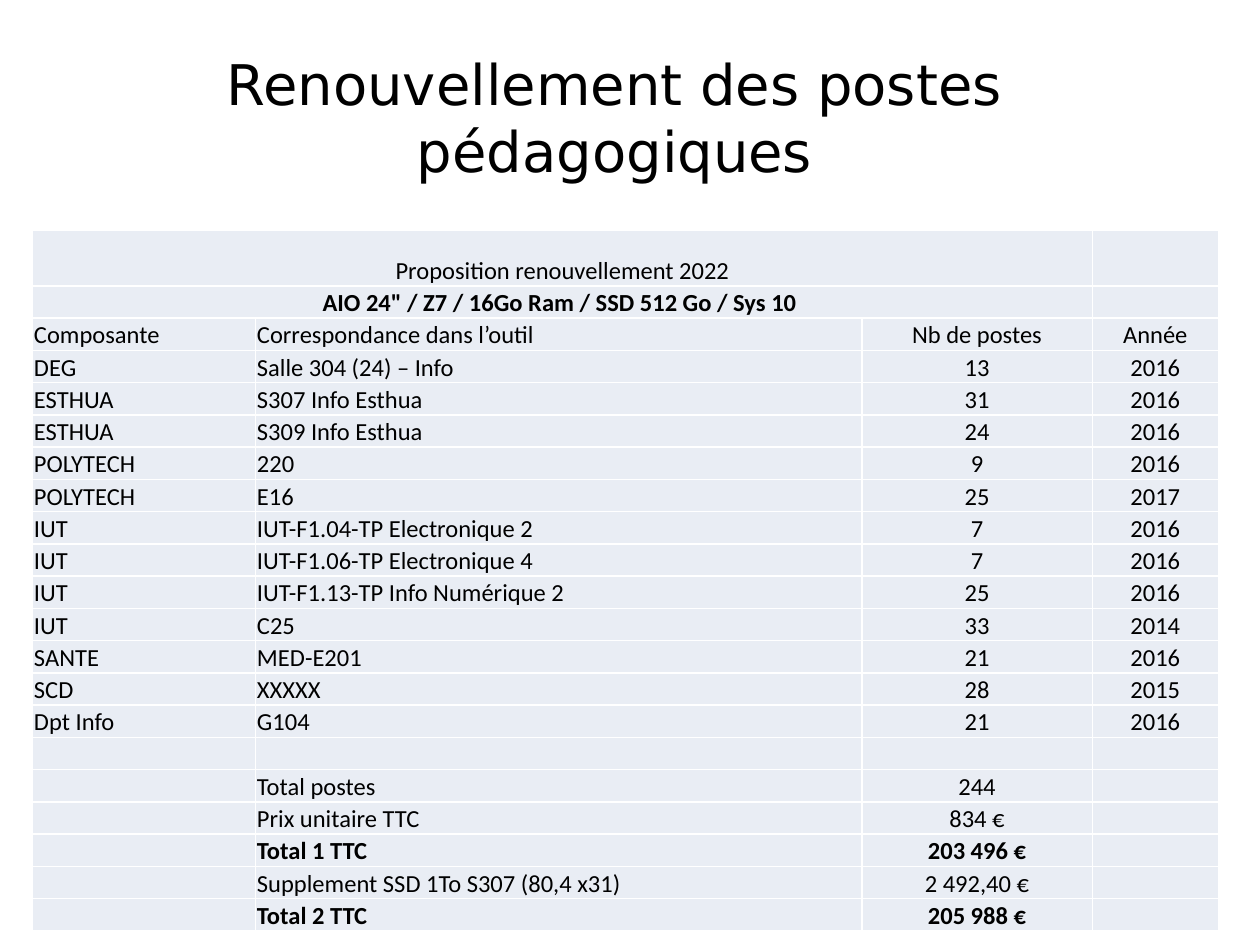
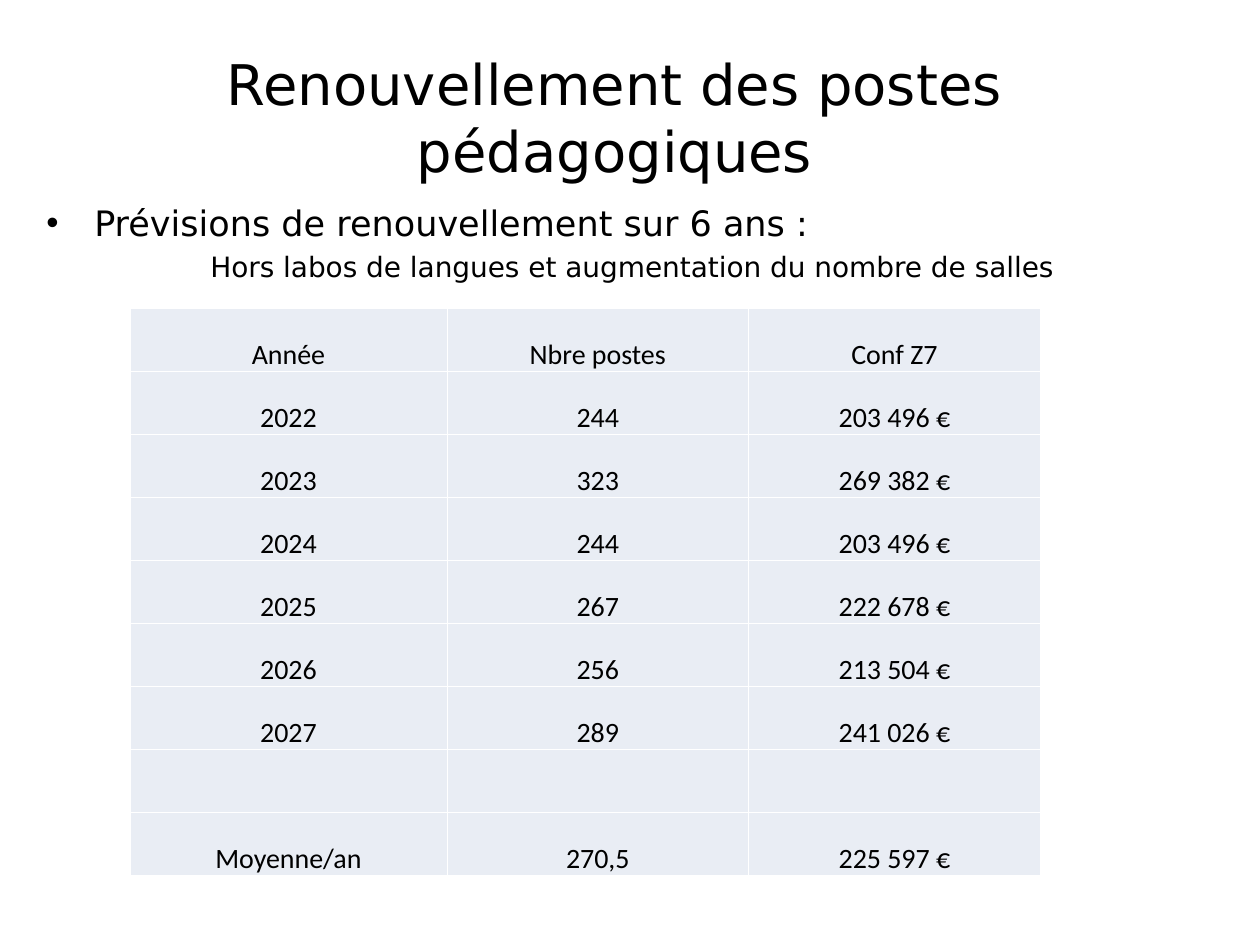
import lxml.etree
import pptx
import pptx.dml.color
import pptx.enum.text
import pptx.oxml.ns
import pptx.util

Inches, Pt = pptx.util.Inches, pptx.util.Pt
qn = pptx.oxml.ns.qn
ALIGN = pptx.enum.text.PP_ALIGN
ANCHOR = pptx.enum.text.MSO_ANCHOR

BLACK, WHITE, CELL_BLUE = "000000", "FFFFFF", "E9EDF4"
TITLE_FONT, TABLE_FONT = "DejaVu Sans", "Calibri"
TITLE = "Renouvellement des postes pédagogiques"

PROPOSAL = {
    "at": (0.26, 1.83), "columns": (1.77, 4.81, 1.83, 1), "aligns": "llcc", "size": 14,
    "heights": [0.44] + [(5.56 - 0.44) / 20] * 20,
    "banners": (0, 1), "bold": (1, 18, 20),
    "rows": [
        ("Proposition renouvellement 2022", "", "", ""),
        ('AIO 24" / Z7 / 16Go Ram / SSD 512 Go / Sys 10 ', "", "", ""),
        ("Composante", "Correspondance dans l’outil", "Nb de postes", "Année"),
        ("DEG", "Salle 304 (24) – Info", "13", "2016"),
        ("ESTHUA", "S307 Info Esthua", "31", "2016"),
        ("ESTHUA", "S309 Info Esthua", "24", "2016"),
        ("POLYTECH", "220", "9", "2016"),
        ("POLYTECH", "E16", "25", "2017"),
        ("IUT", "IUT-F1.04-TP Electronique 2", "7", "2016"),
        ("IUT", "IUT-F1.06-TP Electronique 4", "7", "2016"),
        ("IUT", "IUT-F1.13-TP Info Numérique 2", "25", "2016"),
        ("IUT", "C25", "33", "2014"),
        ("SANTE", "MED-E201", "21", "2016"),
        ("SCD", "XXXXX", "28", "2015"),
        ("Dpt Info", "G104", "21", "2016"),
        ("", "", "", ""),
        ("", "Total postes", "244", ""),
        ("", "Prix unitaire TTC", "834 €", ""),
        ("", "Total 1 TTC", "203 496 €", ""),
        ("", "Supplement SSD 1To S307 (80,4 x31)", "2 492,40 €", ""),
        ("", "Total 2 TTC", "205 988 €", ""),
    ],
}

FORECAST = {
    "at": (1.03, 2.45), "columns": (2.52, 2.39, 2.32), "aligns": "ccc", "size": 16,
    "heights": [0.5] * 9, "banners": (), "bold": (),
    "rows": [
        ("Année", "Nbre postes", "Conf Z7"),
        ("2022", "244", "203 496 €"),
        ("2023", "323", "269 382 €"),
        ("2024", "244", "203 496 €"),
        ("2025", "267", "222 678 €"),
        ("2026", "256", "213 504 €"),
        ("2027", "289", "241 026 €"),
        ("", "", ""),
        ("Moyenne/an", "270,5", "225 597 €"),
    ],
}

FORECAST_INTRO = [
    {"text": "Prévisions de renouvellement sur 6 ans :", "size": 20, "align": ALIGN.LEFT,
     "left": 0.38, "indent": -0.38, "bullet": "•"},
    {"text": "Hors labos de langues et augmentation du nombre de salles", "size": 16,
     "align": ALIGN.CENTER, "left": 0.5, "indent": 0, "bullet": None},
]


def color(value):
    return pptx.dml.color.RGBColor.from_string(value)


def add_span(para, text, font, size, bold=False):
    span = para.add_run()
    span.text = text
    span.font.name = font
    span.font.size = Pt(size)
    span.font.bold = bold
    span.font.color.rgb = color(BLACK)


def add_page(deck):
    page = deck.slides.add_slide(deck.slide_layouts[5])
    title = page.shapes.title
    title.left, title.top, title.width, title.height = map(Inches, (0.07, 0.3, 9.62, 1.25))
    frame = title.text_frame
    frame.auto_size = pptx.enum.text.MSO_AUTO_SIZE.NONE
    frame.vertical_anchor = ANCHOR.MIDDLE
    frame.margin_left = frame.margin_right = Inches(0.15)
    frame.paragraphs[0].alignment = ALIGN.CENTER
    add_span(frame.paragraphs[0], TITLE, TITLE_FONT, 32)
    return page


def add_borders(cell):
    properties = cell._tc.get_or_add_tcPr()
    for side in ("lnL", "lnR", "lnT", "lnB"):
        line = lxml.etree.SubElement(properties, qn("a:" + side), w=str(Pt(1)))
        fill = lxml.etree.SubElement(line, qn("a:solidFill"))
        lxml.etree.SubElement(fill, qn("a:srgbClr"), val=WHITE)


def fill_cell(cell, text, size, align, bold):
    add_borders(cell)
    cell.fill.solid()
    cell.fill.fore_color.rgb = color(CELL_BLUE)
    cell.vertical_anchor = ANCHOR.BOTTOM
    cell.margin_left = cell.margin_right = cell.margin_top = Inches(0.01)
    cell.margin_bottom = 0
    para = cell.text_frame.paragraphs[0]
    para.alignment = align
    if text:
        add_span(para, text, TABLE_FONT, size, bold)
    else:
        lxml.etree.SubElement(para._p, qn("a:endParaRPr"), sz=str(size * 100))


def add_grid(page, grid):
    rows, columns, heights = grid["rows"], grid["columns"], grid["heights"]
    left, top = grid["at"]
    table = page.shapes.add_table(
        len(rows), len(columns), Inches(left), Inches(top),
        Inches(sum(columns)), Inches(sum(heights))).table
    table.first_row = table.horz_banding = False
    for column, width in zip(table.columns, columns):
        column.width = Inches(width)
    for r, values in enumerate(rows):
        table.rows[r].height = Inches(heights[r])
        for c, text in enumerate(values):
            centred = r in grid["banners"] or grid["aligns"][c] == "c"
            fill_cell(table.cell(r, c), text, grid["size"],
                      ALIGN.CENTER if centred else ALIGN.LEFT, r in grid["bold"])
        if r in grid["banners"]:
            table.cell(r, 0).merge(table.cell(r, 2))


def add_intro(page, lines):
    box = page.shapes.add_textbox(*map(Inches, (0.27, 1.55, 9, 4.95)))
    frame = box.text_frame
    frame.word_wrap = True
    for i, line in enumerate(lines):
        para = frame.add_paragraph() if i else frame.paragraphs[0]
        para.alignment = line["align"]
        para.space_before = Pt(line["size"] * 0.2)
        properties = para._p.get_or_add_pPr()
        properties.set("marL", str(Inches(line["left"])))
        properties.set("indent", str(Inches(line["indent"])))
        if line["bullet"]:
            lxml.etree.SubElement(properties, qn("a:buFont"), typeface="Arial")
            lxml.etree.SubElement(properties, qn("a:buChar"), char=line["bullet"])
        add_span(para, line["text"], TITLE_FONT, line["size"])


def main():
    """Build the two slides on renewing the teaching computers."""
    deck = pptx.Presentation()
    deck.slide_width, deck.slide_height = Inches(10), Inches(7.5)
    add_grid(add_page(deck), PROPOSAL)
    forecast_page = add_page(deck)
    add_intro(forecast_page, FORECAST_INTRO)
    add_grid(forecast_page, FORECAST)
    deck.save("out.pptx")


if __name__ == "__main__":
    main()
